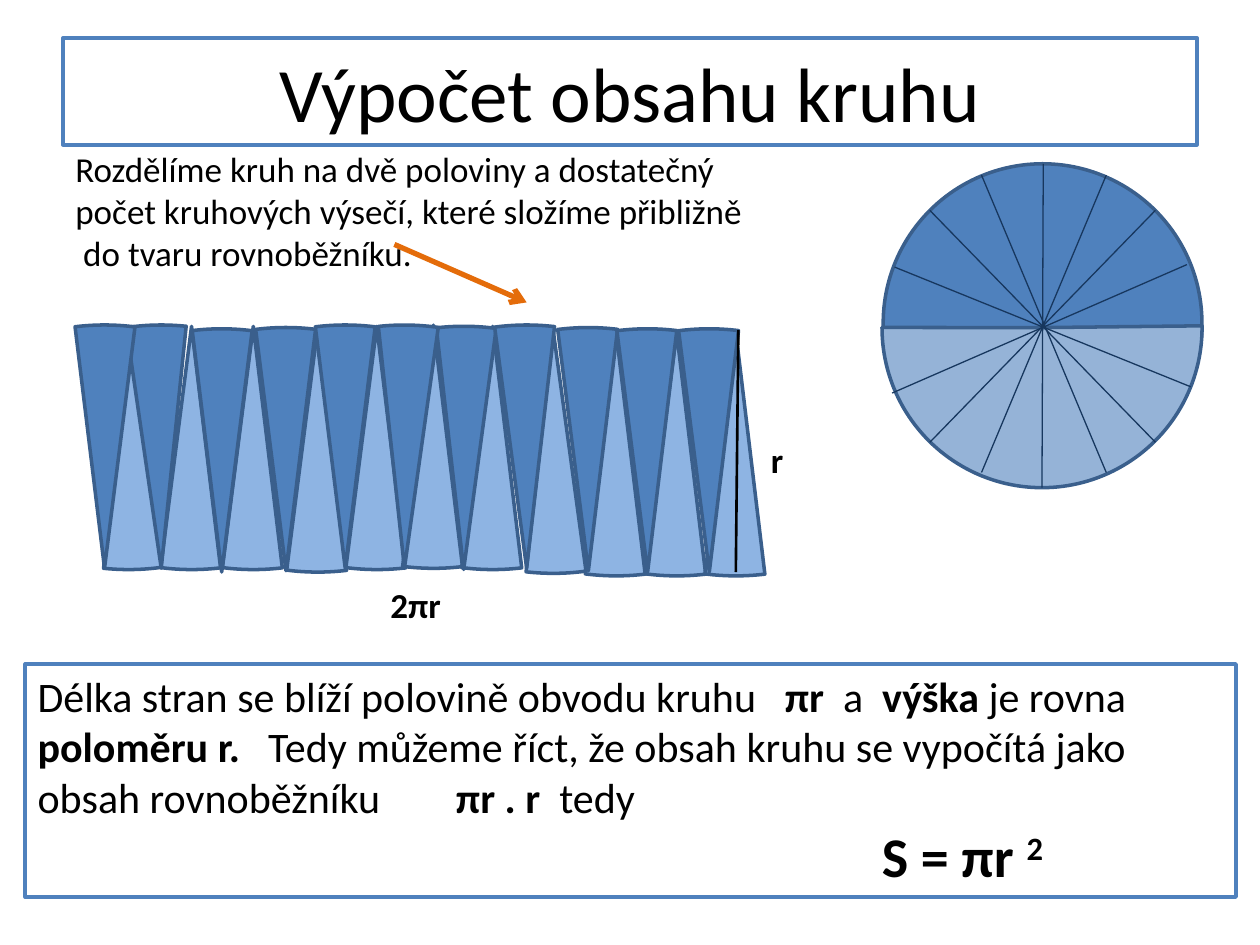
from dataclasses import dataclass

from lxml import etree
from pptx import Presentation
from pptx.dml.color import RGBColor
from pptx.enum.shapes import MSO_CONNECTOR, MSO_SHAPE as SHAPE
from pptx.enum.text import MSO_ANCHOR, PP_ALIGN
from pptx.oxml.ns import qn
from pptx.util import Inches, Pt


@dataclass(frozen=True)
class Theme:
    font: str = "Calibri"
    title: int = 44
    formula: int = 32
    summary: int = 24
    text: int = 20
    black: str = "000000"
    white: str = "FFFFFF"
    blue: str = "4F81BD"
    outline: str = "3A5F8C"
    lower_wedge: str = "8EB4E3"
    lower_half: str = "95B3D7"
    spoke: str = "17375E"
    arrow: str = "E46C0A"


THEME = Theme()

# Content
TITLE = "Výpočet obsahu kruhu"
INTRO = ("Rozdělíme kruh na dvě poloviny a dostatečný počet kruhových výsečí, "
         "které složíme přibližně  do tvaru rovnoběžníku.")
SUMMARY = [  # text, bold
    ("Délka stran se blíží polovině obvodu kruhu\t", False),
    ("πr  ", True), ("a ", False), (" výška ", True), ("je rovna", False),
    (" poloměru r.\t", True),
    ("Tedy můžeme říct, že obsah kruhu se vypočítá jako obsah rovnoběžníku\t", False),
    ("πr . r  ", True), ("tedy", False),
]
SUMMARY_TABS = (1.83, 3.32, 5.93)
FORMULA, EXPONENT = "S = πr ", "2"
FORMULA_INDENT = 6.7
LABELS = [("2πr", 3, 4.58, 0.61), ("r", 6.02, 3.43, 0.3)]  # text, left, top, width

# Wedges: left and top of the full circle, rotation
WEDGE_DIAMETER = 3.86
WEDGE_ANGLES = (153.51, 162)
HALF_ANGLES = (107.61, 0.04)
LOWER_WEDGES = [
    (-0.91, 0.66, 185.9), (-0.41, 0.66, 187.3), (0.08, 0.66, 187.3),
    (0.59, 0.68, 187.3), (1.06, 0.66, 187.3), (1.51, 0.65, 187.3),
    (1.98, 0.66, 187.3), (2.46, 0.69, 186.4), (2.96, 0.71, 187.3),
    (3.44, 0.71, 187.3), (3.91, 0.71, 187.3),
]
UPPER_WEDGES = [
    (-0.65, 2.58, 5.9), (-1.1, 2.58, 7.2), (-0.17, 2.61, 7.2),
    (1.75, 2.59, 7.7), (2.74, 2.6, 6.9), (0.34, 2.6, 7), (0.81, 2.58, 7.1),
    (1.28, 2.58, 8), (2.25, 2.58, 6.6), (3.21, 2.61, 6.9), (3.7, 2.61, 6.9),
]
SPOKES = [
    (8.28, 1.3, 8.27, 3.87), (7.38, 1.67, 9.17, 3.51), (9.17, 1.67, 7.38, 3.51),
    (7.79, 1.39, 8.78, 3.75), (9.42, 2.1, 7.08, 3.12), (7.1, 2.12, 9.45, 3.07),
    (8.78, 1.39, 7.79, 3.75),
]
POINTER = (3.13, 1.94, 4.18, 2.4)
HEIGHT_LINE = (5.86, 2.62, 5.84, 4.54)


def rgb(color):
    return RGBColor.from_string(color)


def paint(shape, fill, line):
    shape.fill.solid()
    shape.fill.fore_color.rgb = rgb(fill)
    shape.line.color.rgb = rgb(line)
    shape.line.width = Pt(2)


def add_figure(slide, kind, box, fill, line=THEME.outline, rotation=0, angles=()):
    figure = slide.shapes.add_shape(kind, *map(Inches, box))
    figure.shadow.inherit = False
    paint(figure, fill, line)
    for index, angle in enumerate(angles):
        figure.adjustments[index] = angle
    figure.rotation = rotation
    return figure


def add_line(slide, ends, color, width, arrow=False):
    line = slide.shapes.add_connector(MSO_CONNECTOR.STRAIGHT, *map(Inches, ends))
    line.line.color.rgb = rgb(color)
    line.line.width = Pt(width)
    if arrow:
        etree.SubElement(line.line._get_or_add_ln(), qn("a:tailEnd"), type="arrow")
    etree.SubElement(line._element.spPr, qn("a:effectLst"))


def style(run, size, bold=False):
    run.font.name = THEME.font
    run.font.size = Pt(size)
    run.font.bold = bold
    run.font.color.rgb = rgb(THEME.black)


def add_run(paragraph, text, size, bold):
    run = paragraph.add_run()
    run.text = text
    style(run, size, bold)
    return run


def add_text(slide, text, box, wrap, bold):
    frame = slide.shapes.add_textbox(*map(Inches, box)).text_frame
    frame.word_wrap = wrap
    frame.text = text
    style(frame.paragraphs[0].runs[0], THEME.text, bold)


def add_title(slide):
    title = slide.shapes.title
    title.left, title.top, title.width, title.height = map(Inches, (0.5, 0.3, 9, 0.85))
    paint(title, THEME.white, THEME.blue)
    title.text_frame.text = TITLE
    title.text_frame.vertical_anchor = MSO_ANCHOR.MIDDLE
    heading = title.text_frame.paragraphs[0]
    heading.alignment = PP_ALIGN.CENTER
    style(heading.runs[0], THEME.title)


def add_summary(slide):
    panel = add_figure(slide, SHAPE.RECTANGLE, (0.2, 5.27, 9.61, 1.85),
                       THEME.white, THEME.blue)
    frame = panel.text_frame
    frame.word_wrap = True
    frame.vertical_anchor = MSO_ANCHOR.TOP
    explanation, formula = frame.paragraphs[0], frame.add_paragraph()
    explanation.alignment = formula.alignment = PP_ALIGN.LEFT
    for text, bold in SUMMARY:
        add_run(explanation, text, THEME.summary, bold)
    tabs = etree.SubElement(explanation._p.get_or_add_pPr(), qn("a:tabLst"))
    for position in SUMMARY_TABS:
        etree.SubElement(tabs, qn("a:tab"), pos=str(Inches(position)), algn="l")
    # Formula pushed right by its indent, exponent raised
    formula._p.get_or_add_pPr().set("marL", str(Inches(FORMULA_INDENT)))
    add_run(formula, FORMULA, THEME.formula, True)
    exponent = add_run(formula, EXPONENT, THEME.formula, True)
    exponent.font._element.set("baseline", "30000")


def main():
    deck = Presentation()
    deck.slide_width, deck.slide_height = Inches(10), Inches(7.5)
    slide = deck.slides.add_slide(deck.slide_layouts[5])
    add_title(slide)

    # Parallelogram made of interlocking wedges
    for wedges, fill in ((LOWER_WEDGES, THEME.lower_wedge), (UPPER_WEDGES, THEME.blue)):
        for left, top, rotation in wedges:
            add_figure(slide, SHAPE.PIE, (left, top, WEDGE_DIAMETER, WEDGE_DIAMETER),
                       fill, rotation=rotation, angles=WEDGE_ANGLES)

    # Circle in two halves, cut into sectors
    add_figure(slide, SHAPE.OVAL, (7.01, 1.3, 2.53, 2.53), THEME.blue)
    add_figure(slide, SHAPE.PIE, (7, 1.33, 2.54, 2.54), THEME.lower_half,
               rotation=180, angles=HALF_ANGLES)
    for spoke in SPOKES:
        add_line(slide, spoke, THEME.spoke, 0.75)

    # Explanations and dimensions
    add_text(slide, INTRO, (0.5, 1.12, 5.53, 1.11), wrap=True, bold=False)
    add_line(slide, POINTER, THEME.arrow, 3, arrow=True)
    add_summary(slide)
    add_line(slide, HEIGHT_LINE, THEME.black, 1.5)
    for text, left, top, width in LABELS:
        add_text(slide, text, (left, top, width, 0.44), wrap=False, bold=True)

    deck.save("out.pptx")


if __name__ == "__main__":
    main()
